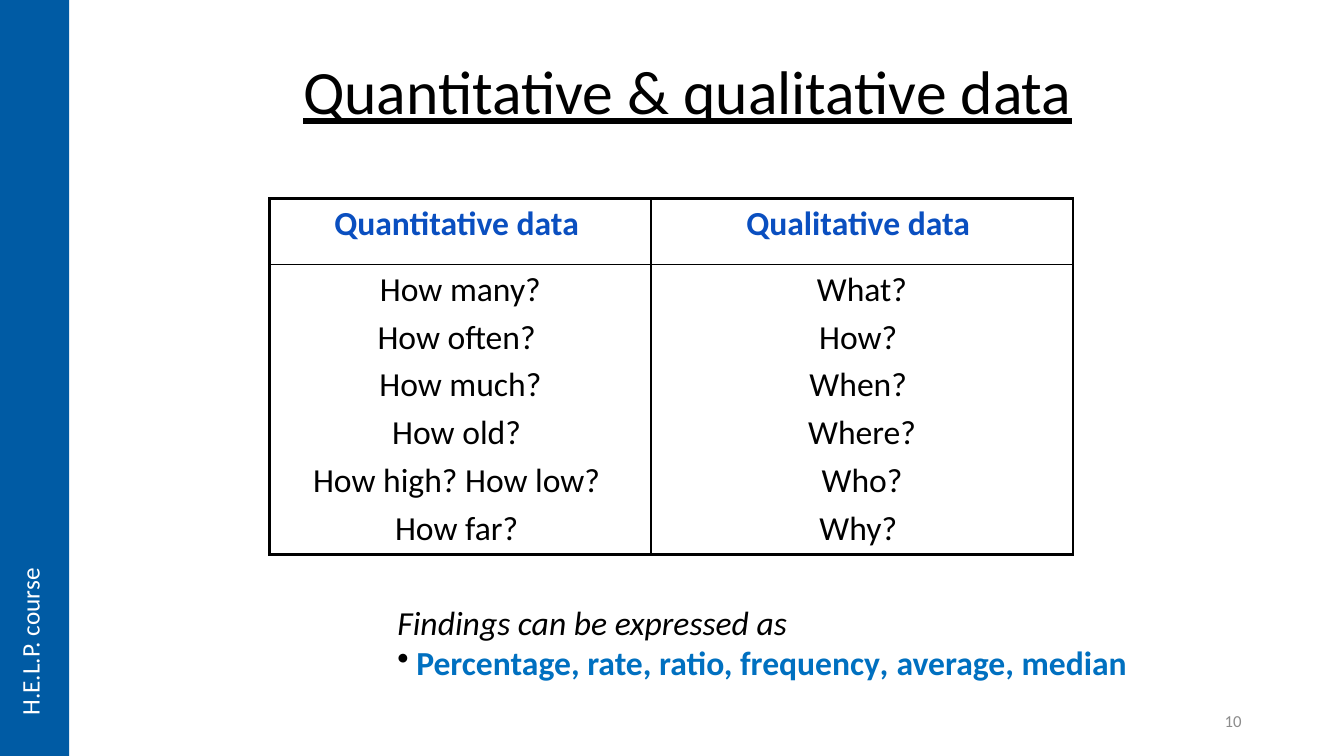
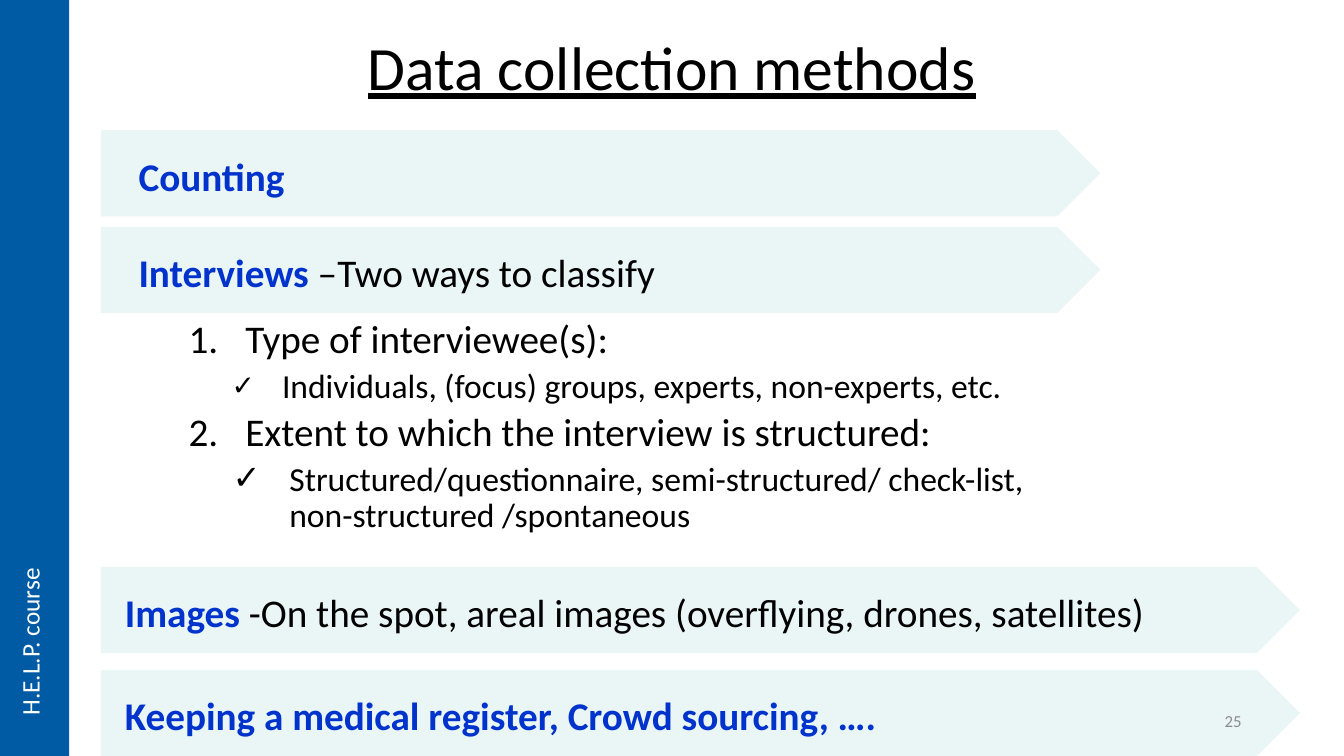
"""Build two course slides on data types and data collection methods."""
from lxml import etree
from pptx import Presentation
from pptx.dml.color import RGBColor
from pptx.enum.shapes import MSO_SHAPE
from pptx.enum.text import MSO_ANCHOR, MSO_AUTO_SIZE, PP_ALIGN
from pptx.oxml.ns import qn
from pptx.util import Pt

PX = 9525
SLIDE_W, SLIDE_H = 1280, 720
FONT = "Calibri"
BLACK = RGBColor(0x00, 0x00, 0x00)
WHITE = RGBColor(0xFF, 0xFF, 0xFF)
GREY = RGBColor(0x8C, 0x8C, 0x8C)
BAND_BLUE = RGBColor(0x00, 0x5B, 0xA4)
HEADER_BLUE = RGBColor(0x0A, 0x4F, 0xC0)
FINDING_BLUE = RGBColor(0x00, 0x70, 0xC0)
METHOD_BLUE = RGBColor(0x00, 0x33, 0xCC)
PALE_TEAL = RGBColor(0xEA, 0xF5, 0xF6)
LEFT, CENTER, RIGHT = PP_ALIGN.LEFT, PP_ALIGN.CENTER, PP_ALIGN.RIGHT
TOP, MIDDLE = MSO_ANCHOR.TOP, MSO_ANCHOR.MIDDLE
RECTANGLE, ARROW = MSO_SHAPE.RECTANGLE, MSO_SHAPE.PENTAGON
NO_AUTOFIT = MSO_AUTO_SIZE.NONE
CONTENT_LAYOUT, TITLE_LAYOUT = 1, 5

COURSE = "H.E.L.P. course"
DATA_TITLE = "Quantitative & qualitative data"
DATA_COLUMNS = [
    ("Quantitative data ", 363,
     ["How many?", "How often? ", "How much?", "How old? ",
      "How high? How low? ", "How far? "]),
    ("Qualitative data ", 402,
     ["What?", "How? ", "When? ", "Where?", "Who?", "Why? "]),
]
DATA_ROWS = [63, 275]
FINDINGS_INTRO = "Findings can be expressed as"
FINDINGS = [
    ("Percentage, rate, ratio, frequency", {}),
    (", ", {"italic": True}),
    ("average, median", {}),
]

METHODS_TITLE = "Data collection methods"
METHODS = [
    (124, 952, 36, "Counting", ""),
    (216, 952, 36, "Interviews", " –Two ways to classify"),
    (540, 1142, 23, "Images",
     " -On the spot, areal images (overflying, drones, satellites)"),
    (638, 1142, 23, "Keeping a medical register, Crowd sourcing, ….", ""),
]
NUMBERED = ("buAutoNum", {"type": "arabicPeriod"})
CHECKED = ("buChar", {"char": "✓"})
DOTTED = ("buChar", {"char": "•"})
INTERVIEWS = [
    (1, NUMBERED, 102, 54, 100, 28, "Type of interviewee(s):"),
    (2, CHECKED, 137, 48, 83, 24,
     "Individuals, (focus) groups, experts, non-experts, etc."),
    (1, NUMBERED, 102, 54, 100, 28,
     "Extent to which the interview is structured:"),
    (2, CHECKED, 144, 54, 100, 24,
     "Structured/questionnaire, semi-structured/ check-list, "
     "non-structured /spontaneous"),
]


def emu(*lengths):
    return [length * PX for length in lengths]


def style(font, size, color, **flags):
    font.name, font.size = FONT, Pt(size)
    font.color.rgb = color
    for flag, value in flags.items():
        setattr(font, flag, value)


def set_bullet(paragraph, bullet, margin, hanging, percent=100):
    props = paragraph._p.get_or_add_pPr()
    props.set("marL", str(margin * PX))
    props.set("indent", str(-hanging * PX))
    bullet_color = etree.SubElement(props, qn("a:buClr"))
    etree.SubElement(bullet_color, qn("a:srgbClr"), val=str(BLACK))
    etree.SubElement(props, qn("a:buSzPct"), val=str(percent * 1000))
    tag, attributes = bullet
    etree.SubElement(props, qn("a:" + tag), attributes)


def fill_lines(frame, lines, size, color, align=LEFT, gap=0, **flags):
    for index, line in enumerate(lines):
        paragraph = frame.paragraphs[0] if index == 0 else frame.add_paragraph()
        paragraph.text = line
        paragraph.alignment = align
        if index and gap:
            paragraph.space_before = Pt(gap)
        style(paragraph.font, size, color, **flags)


def add_text(slide, box, lines, size, color, align=LEFT, anchor=TOP, **flags):
    frame = slide.shapes.add_textbox(*emu(*box)).text_frame
    frame.word_wrap = True
    frame.vertical_anchor = anchor
    fill_lines(frame, lines, size, color, align, **flags)
    return frame


def add_plain_shape(slide, kind, box, color):
    shape = slide.shapes.add_shape(kind, *emu(*box))
    shape.shadow.inherit = False
    shape.fill.solid()
    shape.fill.fore_color.rgb = color
    shape.line.fill.background()
    return shape


def place(placeholder, box):
    placeholder.left, placeholder.top, placeholder.width, placeholder.height = emu(*box)
    frame = placeholder.text_frame
    frame.word_wrap = True
    frame.auto_size = NO_AUTOFIT
    return frame


def add_titled_slide(deck, layout, title, box):
    slide = deck.slides.add_slide(deck.slide_layouts[layout])
    frame = place(slide.shapes.title, box)
    frame.vertical_anchor = MIDDLE
    fill_lines(frame, [title], 44, BLACK, CENTER, underline=True)
    frame.paragraphs[0].line_spacing = 0.9
    return slide


def add_course_marks(slide, number):
    add_text(slide, (904, 667, 288, 38), [number], 12, GREY, RIGHT, MIDDLE)
    add_plain_shape(slide, RECTANGLE, (0, 0, 66, SLIDE_H), BAND_BLUE)
    course = add_text(slide, (9, 520, 48, 171), [COURSE], 18, WHITE)
    course._txBody.bodyPr.set("vert", "vert270")


def set_borders(cell, widths):
    props = cell._tc.get_or_add_tcPr()
    for index, (side, width) in enumerate(zip("LRTB", widths)):
        line = etree.Element(qn("a:ln" + side), w=str(Pt(width)))
        paint = etree.SubElement(line, qn("a:solidFill"))
        etree.SubElement(paint, qn("a:srgbClr"), val=str(BLACK))
        props.insert(index, line)


def add_data_table(slide):
    widths = [width for _, width, _ in DATA_COLUMNS]
    table = slide.shapes.add_table(
        len(DATA_ROWS), len(widths),
        *emu(257, 189, sum(widths), sum(DATA_ROWS))).table
    table.first_row = table.horz_banding = False
    for row, height in zip(table.rows, DATA_ROWS):
        row.height = height * PX
    outer, inner = 2.25, 1
    last_col, last_row = len(widths) - 1, len(DATA_ROWS) - 1
    for col, (header, width, questions) in enumerate(DATA_COLUMNS):
        table.columns[col].width = width * PX
        for row, lines in enumerate(([header], questions)):
            cell = table.cell(row, col)
            cell.fill.background()
            edges = (col == 0, col == last_col, row == 0, row == last_row)
            set_borders(cell, [outer if edge else inner for edge in edges])
            fill_lines(cell.text_frame, lines, 24,
                       BLACK if row else HEADER_BLUE, CENTER, 4.8,
                       bold=row == 0)


def add_findings(slide):
    frame = add_text(slide, (369, 568, 887, 87), [FINDINGS_INTRO], 24, BLACK,
                     anchor=MIDDLE, italic=True)
    measures = frame.add_paragraph()
    set_bullet(measures, DOTTED, 18, 18)
    style(measures.font, 24, FINDING_BLUE, bold=True)
    for text, flags in FINDINGS:
        run = measures.add_run()
        run.text = text
        for flag, value in flags.items():
            setattr(run.font, flag, value)


def add_interviews(slide):
    frame = place(slide.placeholders[1], (122, 300, 867, 225))
    for index, (level, bullet, margin, hanging, percent, size, text) in enumerate(INTERVIEWS):
        paragraph = frame.paragraphs[0] if index == 0 else frame.add_paragraph()
        paragraph.text = text
        paragraph.level = level
        paragraph.line_spacing = 0.9
        paragraph.space_before = Pt(5 if index else 0)
        set_bullet(paragraph, bullet, margin, hanging, percent)
        style(paragraph.font, size, BLACK)


def add_method(slide, top, width, inset, name, detail):
    arrow = add_plain_shape(slide, ARROW, (96, top, width, 82), PALE_TEAL)
    frame = arrow.text_frame
    frame.word_wrap = True
    frame.vertical_anchor = MIDDLE
    frame.margin_left, frame.margin_top, frame.margin_right, frame.margin_bottom = emu(inset, 4, 0, 0)
    paragraph = frame.paragraphs[0]
    paragraph.alignment = LEFT
    for text, color, bold in ((name, METHOD_BLUE, True), (detail, BLACK, False)):
        if text:
            run = paragraph.add_run()
            run.text = text
            style(run.font, 28, color, bold=bold)


def main():
    deck = Presentation()
    deck.slide_width, deck.slide_height = emu(SLIDE_W, SLIDE_H)

    data = add_titled_slide(deck, TITLE_LAYOUT, DATA_TITLE, (247, 57, 816, 66))
    add_data_table(data)
    add_findings(data)
    add_course_marks(data, "10")

    methods = add_titled_slide(deck, CONTENT_LAYOUT, METHODS_TITLE, (232, 7, 816, 120))
    add_interviews(methods)
    for method in METHODS:
        add_method(methods, *method)
    add_course_marks(methods, "25")

    deck.save("out.pptx")


if __name__ == "__main__":
    main()
